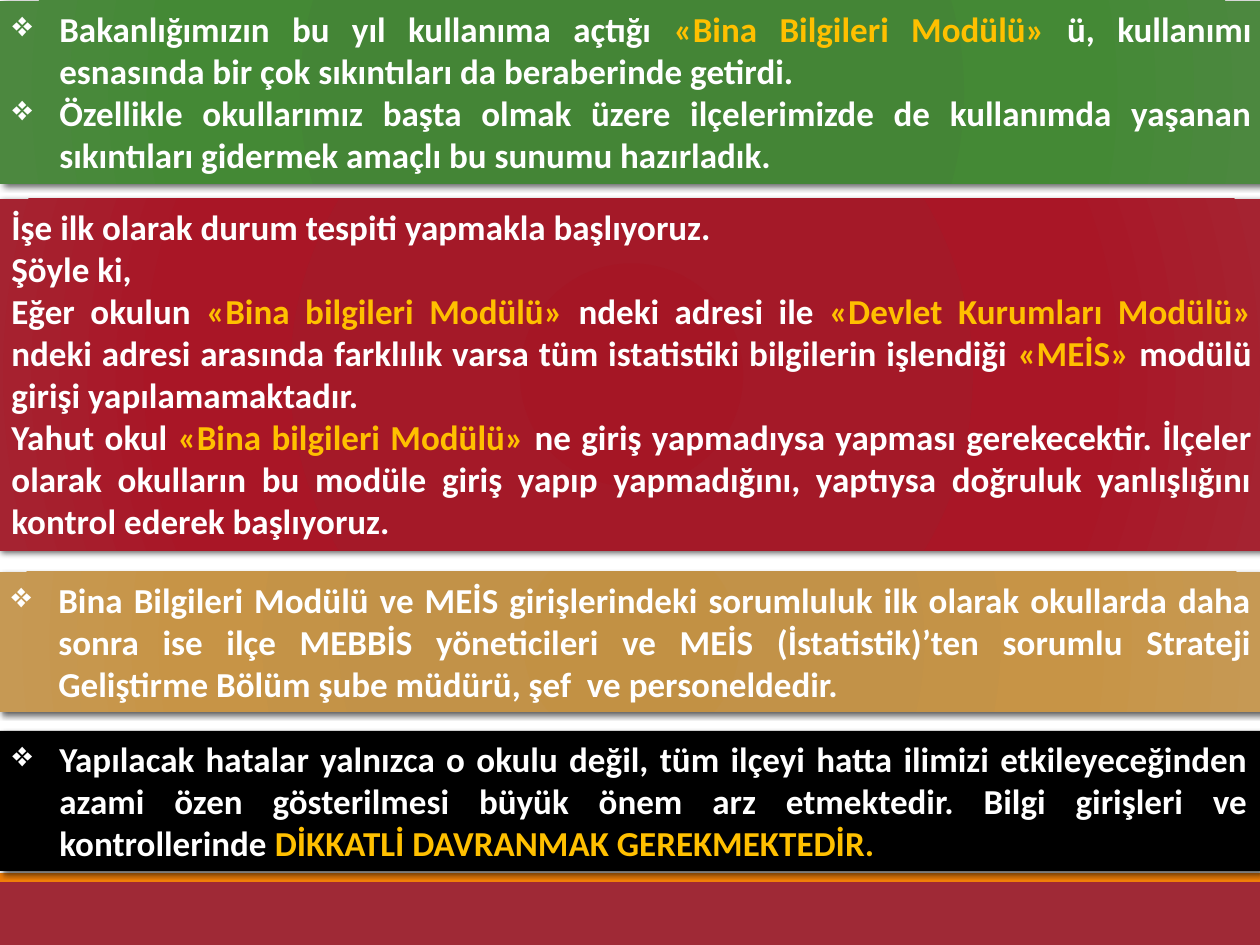
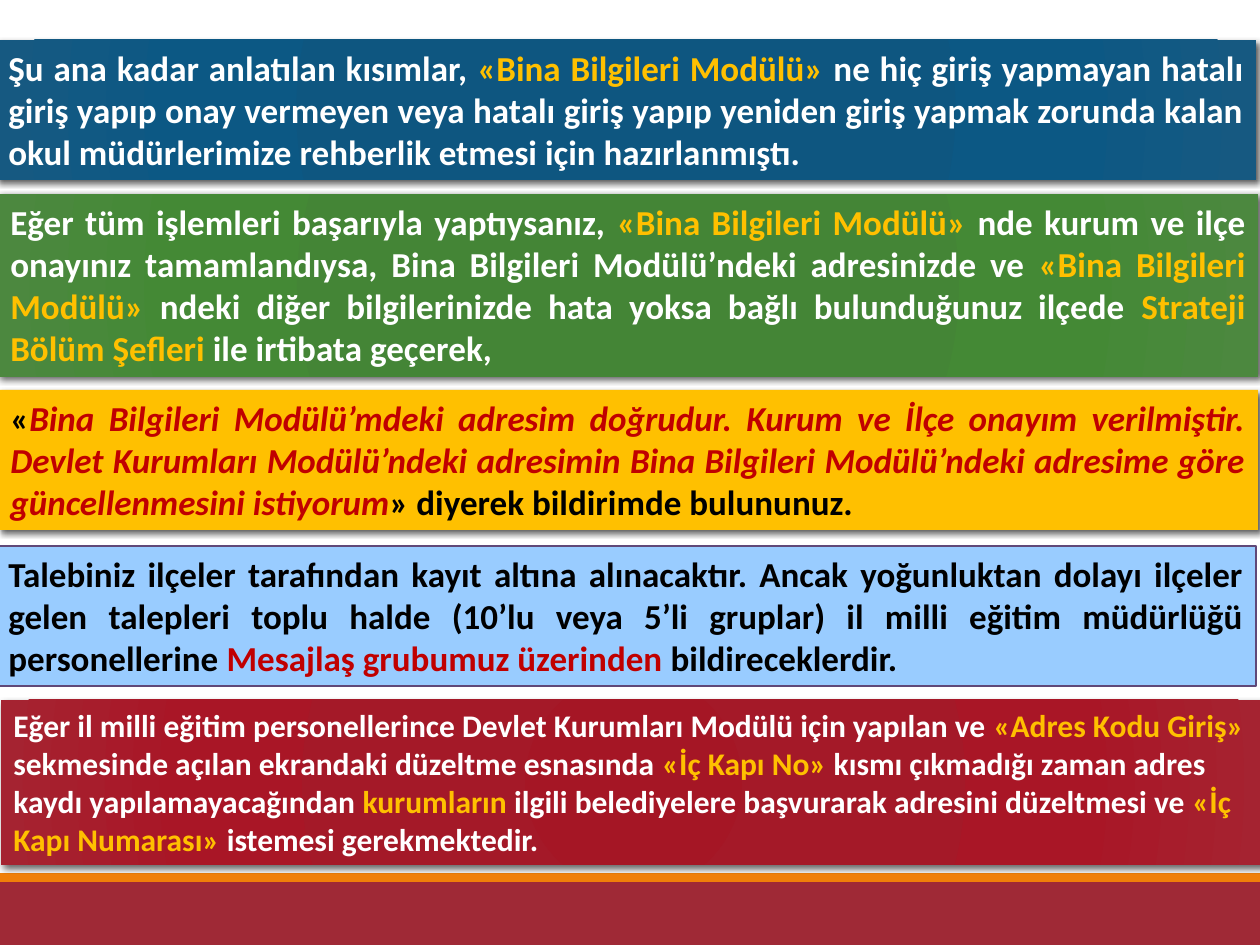
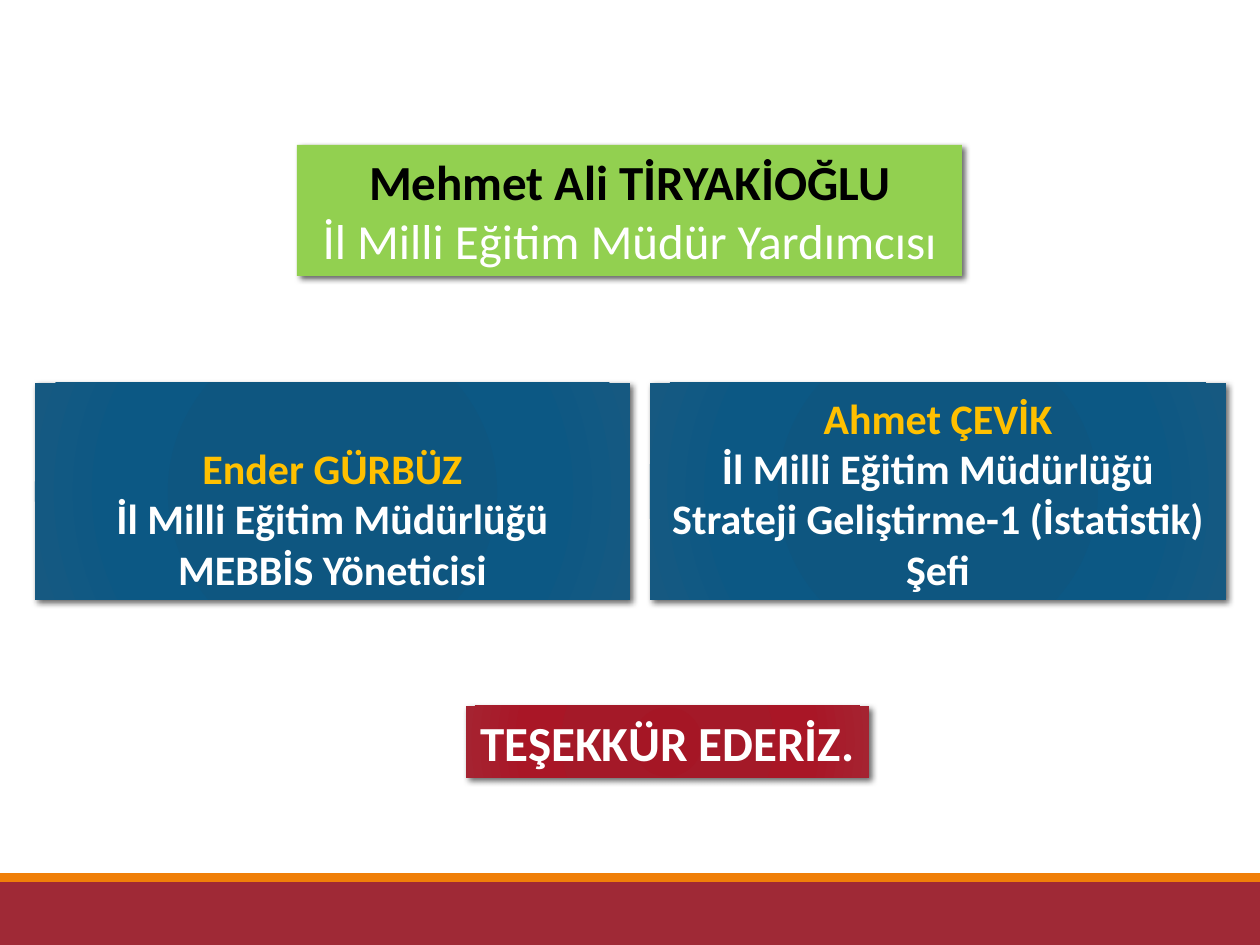
from pptx import Presentation, util as u
from pptx.dml.color import RGBColor
from pptx.enum import shapes, text
from pptx.oxml import parse_xml
from pptx.oxml.ns import qn

PX = 914400 / 126
SIZE = 1260, 945
FONT = "Calibri"
MARK = "❖"
HANG = 47
NS = 'xmlns:a="http://schemas.openxmlformats.org/drawingml/2006/main"'
WHITE, BLACK, AMBER, RED = "FFFFFF", "000000", "FFC000", "C00000"
STOPS = 0, 34, 70, 100

# Fill (one colour, or four for a radial blend), text colour, accent colour
STYLES = {
    "green": ("438534 448536 448935 4C883F", WHITE, AMBER),
    "red": ("A51625 A41928 A91626 A52331", WHITE, AMBER),
    "gold": ("C29144 C29248 C79446 C69954", WHITE, AMBER),
    "blue": ("0C5581 0E5680 0C5884 165981", WHITE, AMBER),
    "black": (BLACK, WHITE, AMBER),
    "amber": (AMBER, BLACK, RED),
    "sky": ("99CCFF", BLACK, RED),
    "lime": ("92D050", WHITE, BLACK),
}

BANDS = [((0, 882, 1260, 63), "9F2936"), ((0, 873, 1260, 9), "F07F09")]

JUST, LEFT, MID = (text.PP_ALIGN.JUSTIFY, text.PP_ALIGN.LEFT,
                   text.PP_ALIGN.CENTER)
LIST = {"mark": True}
CARD = {"align": MID, "size": 24, "low": True}
SIGN = {"align": MID, "size": 28, "wrap": False}

# Each box: style, place, paragraphs (accents between asterisks), options
SLIDES = [
    [
        ("green", (0, 1, 1264, 183), [
            "Bakanlığımızın bu yıl kullanıma açtığı *«Bina Bilgileri Modülü» *"
            "ü, kullanımı esnasında bir çok sıkıntıları da beraberinde getirdi.",
            "Özellikle okullarımız başta olmak üzere ilçelerimizde de "
            "kullanımda yaşanan sıkıntıları gidermek amaçlı bu sunumu "
            "hazırladık.",
        ], LIST),
        ("red", (-1, 199, 1265, 352), [
            "İşe ilk olarak durum tespiti yapmakla başlıyoruz. ",
            "Şöyle ki,",
            "Eğer okulun *«Bina bilgileri Modülü» *ndeki adresi ile "
            "*«Devlet Kurumları Modülü» *ndeki adresi arasında farklılık "
            "varsa tüm istatistiki bilgilerin işlendiği *«MEİS» *modülü "
            "girişi yapılamamaktadır. ",
            "Yahut okul *«Bina bilgileri Modülü» *ne giriş yapmadıysa "
            "yapması gerekecektir. İlçeler olarak okulların bu modüle giriş "
            "yapıp yapmadığını, yaptıysa doğruluk yanlışlığını kontrol "
            "ederek başlıyoruz.",
        ], {}),
        ("gold", (-1, 572, 1265, 140), [
            "Bina Bilgileri Modülü ve MEİS girişlerindeki sorumluluk ilk "
            "olarak okullarda daha sonra ise ilçe MEBBİS yöneticileri ve MEİS "
            "(İstatistik)’ten sorumlu Strateji Geliştirme Bölüm şube müdürü, "
            "şef  ve personeldedir.",
        ], LIST),
        ("black", (0, 731, 1260, 140), [
            "Yapılacak hatalar yalnızca o okulu değil, tüm ilçeyi hatta "
            "ilimizi etkileyeceğinden azami özen gösterilmesi büyük önem arz "
            "etmektedir. Bilgi girişleri ve kontrollerinde "
            "*DİKKATLİ DAVRANMAK GEREKMEKTEDİR.*",
        ], LIST),
    ],
    [
        ("blue", (-4, 40, 1260, 140), [
            "Şu ana kadar anlatılan kısımlar, *«Bina Bilgileri Modülü» *ne "
            "hiç giriş yapmayan hatalı giriş yapıp onay vermeyen veya hatalı "
            "giriş yapıp yeniden giriş yapmak zorunda kalan okul "
            "müdürlerimize rehberlik etmesi için hazırlanmıştı.",
        ], {}),
        ("green", (-2, 194, 1260, 183), [
            "Eğer tüm işlemleri başarıyla yaptıysanız, *«Bina Bilgileri "
            "Modülü» *nde kurum ve ilçe onayınız tamamlandıysa, Bina "
            "Bilgileri Modülü’ndeki adresinizde ve *«Bina Bilgileri Modülü» *"
            "ndeki diğer bilgilerinizde hata yoksa bağlı bulunduğunuz ilçede "
            "*Strateji Bölüm Şefleri *ile irtibata geçerek, ",
        ], {}),
        ("amber", (-2, 390, 1260, 140), [
            "«*Bina Bilgileri Modülü’mdeki adresim doğrudur. Kurum ve İlçe "
            "onayım verilmiştir. Devlet Kurumları Modülü’ndeki adresimin Bina "
            "Bilgileri Modülü’ndeki adresime göre güncellenmesini istiyorum*"
            "» diyerek bildirimde bulununuz.",
        ], {"slant": True}),
        ("sky", (-4, 546, 1260, 140), [
            "Talebiniz ilçeler tarafından kayıt altına alınacaktır. Ancak "
            "yoğunluktan dolayı ilçeler gelen talepleri toplu halde (10’lu "
            "veya 5’li gruplar) il milli eğitim müdürlüğü personellerine "
            "*Mesajlaş grubumuz üzerinden *bildireceklerdir.",
        ], {"line": "604878"}),
        ("red", (1, 700, 1265, 165), [
            "Eğer il milli eğitim personellerince Devlet Kurumları Modülü "
            "için yapılan ve *«Adres Kodu Giriş» *sekmesinde açılan ekrandaki "
            "düzeltme esnasında *«İç Kapı No»* kısmı çıkmadığı zaman adres "
            "kaydı yapılamayacağından *kurumların* ilgili belediyelere "
            "başvurarak adresini düzeltmesi ve *«İç Kapı Numarası»* "
            "istemesi gerekmektedir.",
        ], {"size": 18, "align": LEFT}),
    ],
    [
        ("lime", (297, 145, 665, 131), [
            "*Mehmet Ali TİRYAKİOĞLU*",
            "İl Milli Eğitim Müdür Yardımcısı",
        ], {**SIGN, "thin": True}),
        ("blue", (35, 383, 595, 217), [
            "*Ender GÜRBÜZ*",
            "İl Milli Eğitim Müdürlüğü",
            "MEBBİS Yöneticisi",
        ], CARD),
        ("blue", (650, 383, 576, 217), [
            "*Ahmet ÇEVİK*",
            "İl Milli Eğitim Müdürlüğü",
            "Strateji Geliştirme-1 (İstatistik) Şefi",
        ], CARD),
        ("red", (466, 706, 403, 72), ["TEŞEKKÜR EDERİZ."], SIGN),
    ],
]


def px(n):
    return u.Emu(round(n * PX))


def rgb(code):
    return RGBColor.from_string(code)


def blend(shape, codes):
    """Fill with a radial gradient that starts at the centre."""
    shape.fill.gradient()
    stops = "".join(
        f'<a:gs pos="{pos * 1000}"><a:srgbClr val="{code}"/></a:gs>'
        for pos, code in zip(STOPS, codes))
    new = parse_xml(
        f'<a:gradFill {NS} rotWithShape="1"><a:gsLst>{stops}</a:gsLst>'
        '<a:path path="circle"><a:fillToRect l="50000" t="50000" r="50000" '
        'b="50000"/></a:path></a:gradFill>')
    props = shape._element.spPr
    props.replace(props.find(qn("a:gradFill")), new)


def shade(shape):
    """Cast a soft shadow down and to the right."""
    shape._element.spPr.find(qn("a:effectLst")).append(parse_xml(
        f'<a:outerShdw {NS} blurRad="44450" dist="25400" dir="2700000" '
        'algn="tl" rotWithShape="0"><a:srgbClr val="000000">'
        '<a:alpha val="60000"/></a:srgbClr></a:outerShdw>'))


def rect(slide, place, fill, line=None):
    shape = slide.shapes.add_shape(shapes.MSO_SHAPE.RECTANGLE,
                                   *map(px, place))
    shape.shadow.inherit = False
    codes = fill.split()
    if len(codes) > 1:
        blend(shape, codes)
    else:
        shape.fill.solid()
        shape.fill.fore_color.rgb = rgb(fill)
    if line:
        shape.line.color.rgb = rgb(line)
        shape.line.width = u.Pt(1)
    else:
        shape.line.fill.background()
    return shape


def bullet(para):
    props = para._p.get_or_add_pPr()
    props.set("marL", str(px(HANG)))
    props.set("indent", str(-px(HANG)))
    props.append(parse_xml(f'<a:buChar {NS} char="{MARK}"/>'))


def write(para, line, ink, accent, opts):
    para.alignment = opts.get("align", JUST)
    if opts.get("mark"):
        bullet(para)
    for i, part in enumerate(line.split("*")):
        if not part:
            continue
        hot = i % 2 == 1
        run = para.add_run()
        run.text = part
        font = run.font
        font.name = FONT
        font.size = u.Pt(opts.get("size", 20))
        font.bold = hot or not opts.get("thin", False)
        font.italic = hot and opts.get("slant", False)
        font.color.rgb = rgb(accent if hot else ink)


def box(slide, style, place, lines, opts):
    fill, ink, accent = STYLES[style]
    line = opts.get("line")
    shape = rect(slide, place, fill, line)
    if not line:
        shade(shape)
    frame = shape.text_frame
    frame.word_wrap = opts.get("wrap", True)
    frame.vertical_anchor = (text.MSO_ANCHOR.BOTTOM if opts.get("low")
                             else text.MSO_ANCHOR.TOP)
    for i, line in enumerate(lines):
        para = frame.add_paragraph() if i else frame.paragraphs[0]
        write(para, line, ink, accent, opts)


def main():
    deck = Presentation()
    deck.slide_width, deck.slide_height = map(px, SIZE)
    for boxes in SLIDES:
        slide = deck.slides.add_slide(deck.slide_layouts[6])
        for place, fill in BANDS:
            rect(slide, place, fill)
        for item in boxes:
            box(slide, *item)
    deck.save("out.pptx")


if __name__ == "__main__":
    main()
